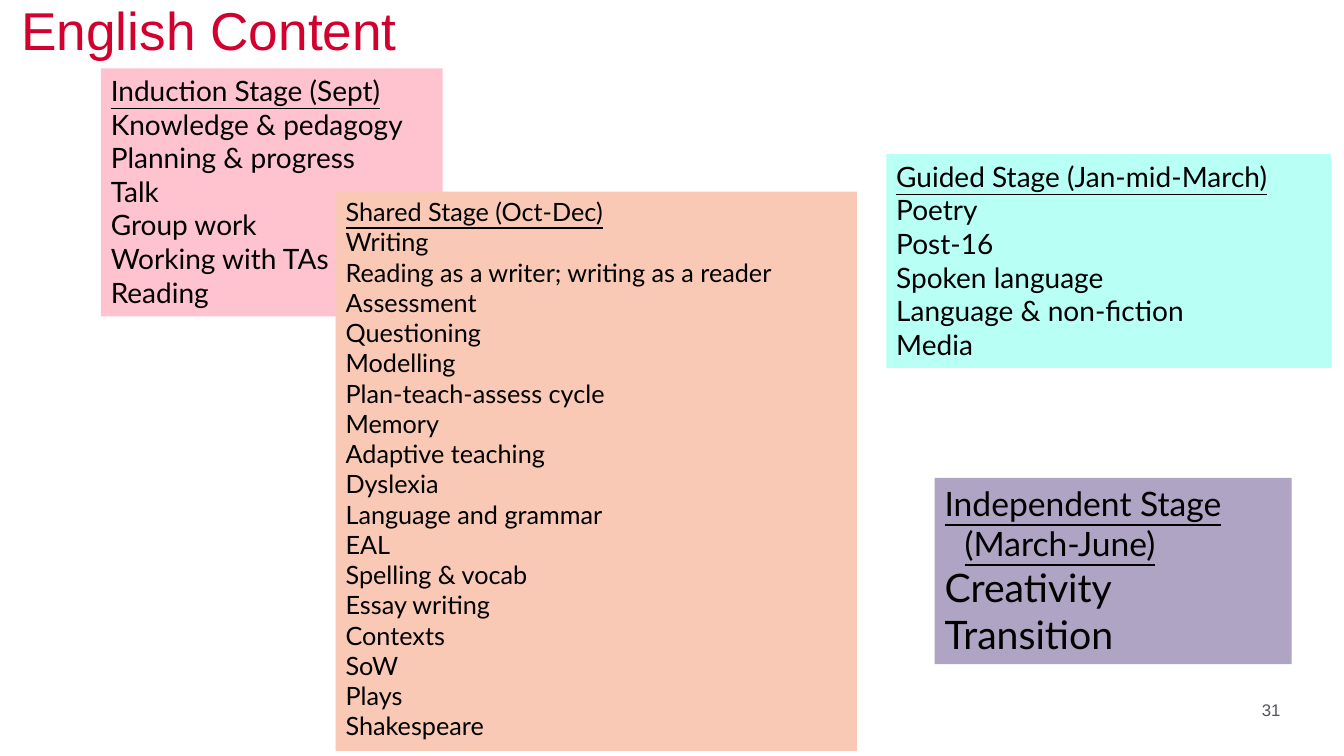
from dataclasses import dataclass

from pptx import Presentation
from pptx.dml.color import RGBColor
from pptx.enum import shapes, text
from pptx.util import Inches, Pt

BLACK = RGBColor(0x00, 0x00, 0x00)
RED = RGBColor(0xD2, 0x00, 0x2E)
GREY = RGBColor(0x50, 0x53, 0x5A)
PINK = RGBColor(0xFF, 0xC3, 0xD0)
PEACH = RGBColor(0xF9, 0xC9, 0xB5)
AQUA = RGBColor(0xB8, 0xFF, 0xF5)
MAUVE = RGBColor(0xAF, 0xA4, 0xC4)

Box = tuple[float, float, float, float]


@dataclass(frozen=True)
class Stage:
    box: Box
    fill: RGBColor
    title: str
    topics: tuple[str, ...]
    head: int
    body: int
    align: text.PP_ALIGN = text.PP_ALIGN.LEFT


@dataclass(frozen=True)
class Label:
    box: Box
    words: str
    size: int
    color: RGBColor
    anchor: text.MSO_ANCHOR
    align: text.PP_ALIGN


STAGES = (
    Stage((1, 0.68, 3.39, 2.46), PINK, "Induction Stage (Sept)", (
        "Knowledge & pedagogy", "Planning & progress", "Talk", "Group work",
        "Working with TAs", "Reading"), 20, 20),
    Stage((3.33, 1.9, 5.17, 5.55), PEACH, "Shared Stage (Oct-Dec)", (
        "Writing", "Reading as a writer; writing as a reader", "Assessment",
        "Questioning", "Modelling", "Plan-teach-assess cycle", "Memory",
        "Adaptive teaching", "Dyslexia", "Language and grammar", "EAL",
        "Spelling & vocab", "Essay writing", "Contexts", "SoW", "Plays",
        "Shakespeare"), 18, 18),
    Stage((8.79, 1.53, 4.41, 2.12), AQUA, "Guided Stage (Jan-mid-March)", (
        "Poetry", "Post-16", "Spoken language", "Language & non-fiction",
        "Media"), 20, 20, text.PP_ALIGN.JUSTIFY),
    Stage((9.27, 4.74, 3.54, 1.85), MAUVE, "Independent Stage (March-June)", (
        "Creativity", "Transition"), 24, 28),
)

LABELS = (
    Label((0.21, -0.3, 9.06, 0.91), "English Content", 38, RED,
          text.MSO_ANCHOR.BOTTOM, text.PP_ALIGN.LEFT),
    Label((11.71, 6.94, 0.99, 0.28), "31", 12, GREY,
          text.MSO_ANCHOR.TOP, text.PP_ALIGN.RIGHT),
)


def style(para, face: str, size: int, color: RGBColor) -> None:
    para.font.name = face
    para.font.size = Pt(size)
    para.font.color.rgb = color


def draw_label(slide, label: Label) -> None:
    frame = slide.shapes.add_textbox(*map(Inches, label.box)).text_frame
    frame.word_wrap = True
    frame.vertical_anchor = label.anchor
    frame.margin_left = frame.margin_right = 0
    frame.margin_top = frame.margin_bottom = 0
    para = frame.paragraphs[0]
    para.text = label.words
    para.alignment = label.align
    style(para, "Arial", label.size, label.color)


def draw_stage(slide, stage: Stage) -> None:
    shape = slide.shapes.add_shape(
        shapes.MSO_SHAPE.RECTANGLE, *map(Inches, stage.box))
    shape.shadow.inherit = False
    shape.fill.solid()
    shape.fill.fore_color.rgb = stage.fill
    shape.line.fill.background()
    frame = shape.text_frame
    frame.word_wrap = True
    frame.auto_size = text.MSO_AUTO_SIZE.SHAPE_TO_FIT_TEXT
    frame.vertical_anchor = text.MSO_ANCHOR.TOP
    frame.text = "\n".join((stage.title, *stage.topics))
    for row, para in enumerate(frame.paragraphs):
        first = row == 0
        para.alignment = stage.align if first else text.PP_ALIGN.LEFT
        props = para._p.get_or_add_pPr()
        props.set("marL", str(Inches(0.2)))
        props.set("indent", str(Inches(-0.2)))
        style(para, "Lato", stage.head if first else stage.body, BLACK)
        para.font.underline = first


def main() -> None:
    deck = Presentation()
    deck.slide_width = Inches(13.33)
    deck.slide_height = Inches(7.5)
    slide = deck.slides.add_slide(deck.slide_layouts[6])
    for label in LABELS:
        draw_label(slide, label)
    for stage in STAGES:
        draw_stage(slide, stage)
    deck.save("out.pptx")


if __name__ == "__main__":
    main()
